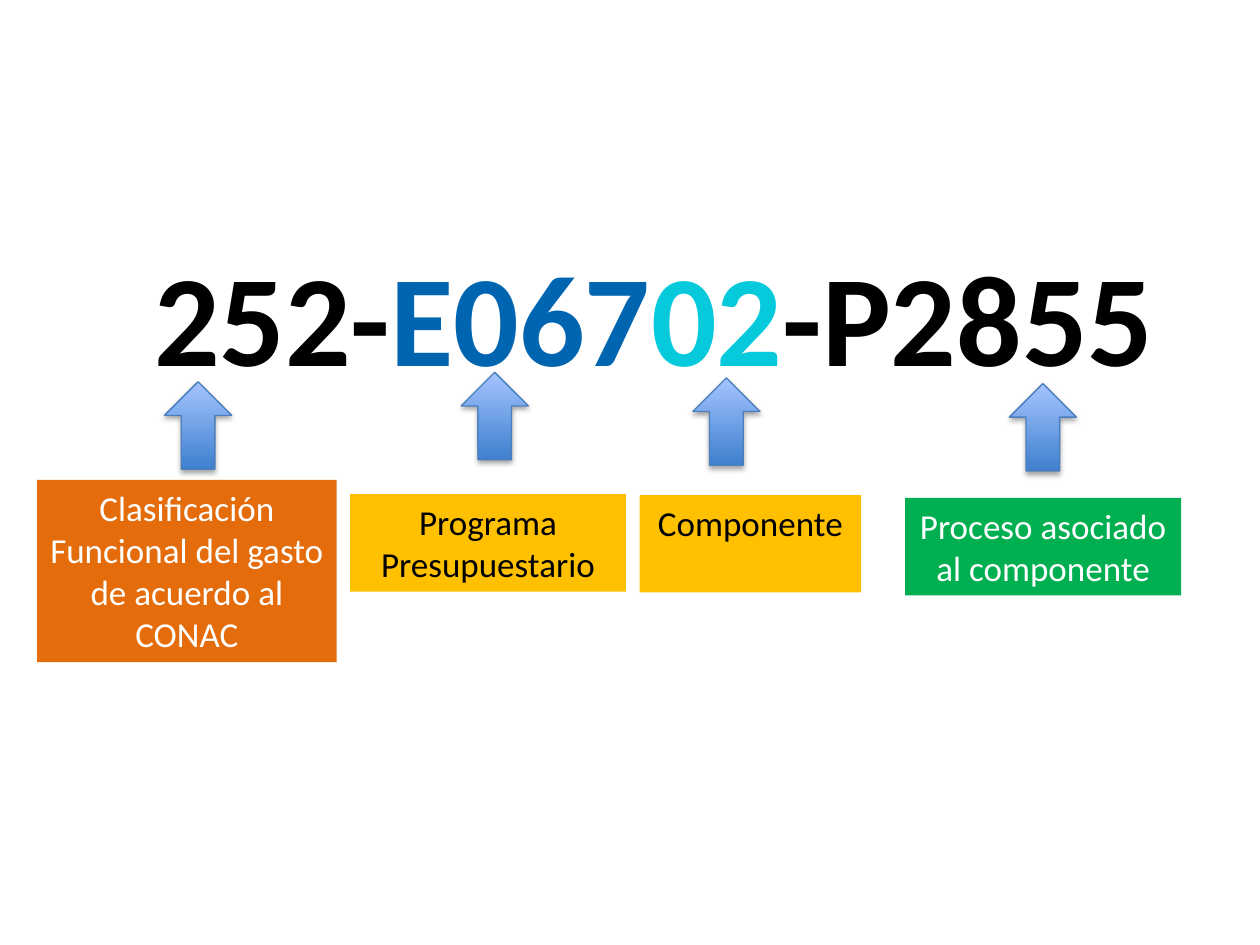
from lxml.etree import SubElement
from pptx import Presentation
from pptx.dml.color import RGBColor
from pptx.enum.shapes import MSO_SHAPE
from pptx.enum.text import MSO_ANCHOR, PP_ALIGN
from pptx.oxml.ns import qn
from pptx.util import Pt

BLACK = RGBColor(0x00, 0x00, 0x00)
WHITE = RGBColor(0xFF, 0xFF, 0xFF)
BLUE = RGBColor(0x00, 0x65, 0xB0)
CYAN = RGBColor(0x06, 0xCA, 0xDC)
ORANGE = RGBColor(0xE4, 0x6C, 0x0A)
AMBER = RGBColor(0xFF, 0xC0, 0x00)
GREEN = RGBColor(0x00, 0xB0, 0x50)
ARROW_DARK = RGBColor(0x3F, 0x80, 0xCE)
ARROW_LIGHT = RGBColor(0xA4, 0xC4, 0xFF)
ARROW_LINE = RGBColor(0x4B, 0x7E, 0xBC)

FONT = "Calibri"
ARROW_WIDTH, ARROW_HEIGHT = 38.4, 49.9

CODE_PARTS = [("252-", BLACK), ("E067", BLUE), ("02", CYAN), ("-P2855", BLACK)]

# Label text, fill, text colour, label box, left and top of its arrow
LABELS = [
    ("Clasificación Funcional del gasto de acuerdo al CONAC", ORANGE, WHITE,
     (21.2, 274.2, 171.2, 104.2), (94, 218.2)),
    ("Programa Presupuestario", AMBER, BLACK,
     (200, 282.4, 157.7, 55.7), (263.5, 212.8)),
    ("Componente", AMBER, BLACK,
     (365.5, 282.9, 126.6, 55.7), (395.9, 216)),
    ("Proceso asociado al componente", GREEN, WHITE,
     (517.2, 284.5, 157.7, 55.7), (576.7, 219.2)),
]


def write_text(shape, parts, size, bold=False):
    """Write one centred paragraph from (text, colour) parts."""
    frame = shape.text_frame
    frame.word_wrap = True
    frame.vertical_anchor = MSO_ANCHOR.TOP
    paragraph = frame.paragraphs[0]
    paragraph.alignment = PP_ALIGN.CENTER
    for text, color in parts:
        run = paragraph.add_run()
        run.text = text
        run.font.name = FONT
        run.font.size = Pt(size)
        run.font.bold = bold
        run.font.color.rgb = color


def add_code(slide, box):
    code = slide.shapes.add_textbox(*map(Pt, box))
    write_text(code, CODE_PARTS, size=74, bold=True)


def add_label(slide, box, text, fill, color):
    label = slide.shapes.add_shape(MSO_SHAPE.RECTANGLE, *map(Pt, box))
    label.shadow.inherit = False
    label.fill.solid()
    label.fill.fore_color.rgb = fill
    label.line.fill.background()
    write_text(label, [(text, color)], size=20)


def add_soft_shadow(shape):
    shape.shadow.inherit = False
    effects = shape._element.spPr.find(qn("a:effectLst"))
    shadow = SubElement(effects, qn("a:outerShdw"), blurRad=str(Pt(3.1)),
                        dist=str(Pt(1.8)), dir="5400000", rotWithShape="0")
    color = SubElement(shadow, qn("a:srgbClr"), val=str(BLACK))
    SubElement(color, qn("a:alpha"), val="35000")


def add_arrow(slide, box):
    arrow = slide.shapes.add_shape(MSO_SHAPE.UP_ARROW, *map(Pt, box))
    arrow.fill.gradient()
    arrow.fill.gradient_angle = 90
    for stop, color, position in zip(arrow.fill.gradient_stops,
                                     (ARROW_DARK, ARROW_LIGHT), (0, 1)):
        stop.color.rgb = color
        stop.position = position
    arrow.line.color.rgb = ARROW_LINE
    arrow.line.width = Pt(0.75)
    add_soft_shadow(arrow)


def main():
    deck = Presentation()
    deck.slide_width, deck.slide_height = Pt(720), Pt(540)
    slide = deck.slides.add_slide(deck.slide_layouts[6])

    # Programme code
    add_code(slide, (49.7, 132, 648, 89.3))

    # Explanations, each with an arrow to its part of the code
    for text, fill, color, box, arrow_corner in LABELS:
        add_label(slide, box, text, fill, color)
        add_arrow(slide, (*arrow_corner, ARROW_WIDTH, ARROW_HEIGHT))

    deck.save("out.pptx")


if __name__ == "__main__":
    main()
